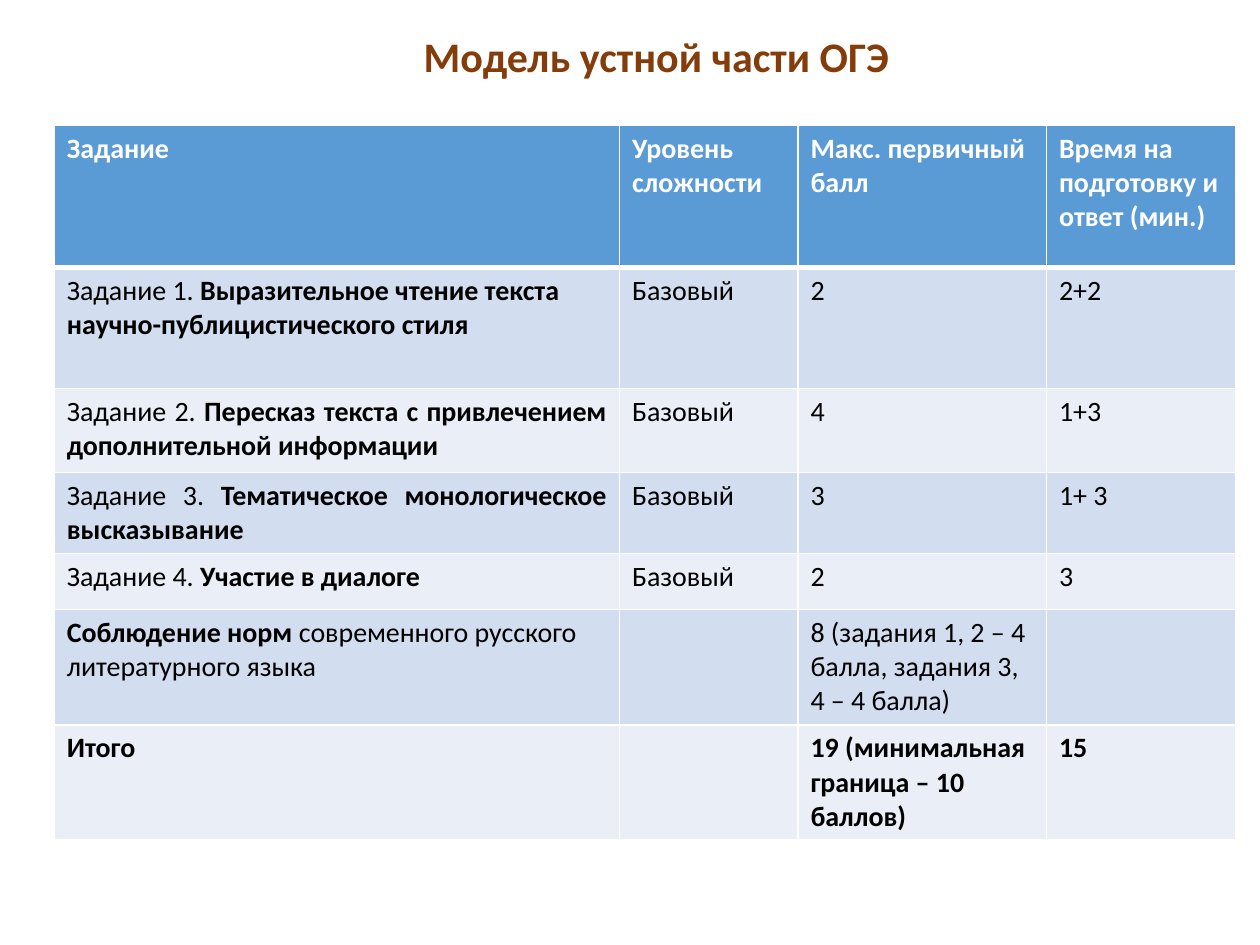
from dataclasses import dataclass

from lxml.etree import SubElement
from pptx import Presentation
from pptx.dml.color import RGBColor
from pptx.enum.text import MSO_ANCHOR, PP_ALIGN
from pptx.oxml.ns import qn
from pptx.util import Pt

# Content: asterisks enclose bold words
TITLE = "Модель устной части ОГЭ"
ROWS = [
    ("*Задание*", "*Уровень сложности*", "*Макс. первичный балл*",
     "*Время на подготовку и ответ (мин.)*"),
    ("Задание 1. *Выразительное чтение текста научно-публицистического стиля*",
     "Базовый", "2", "2+2"),
    ("Задание 2. *Пересказ текста с привлечением дополнительной информации*",
     "Базовый", "4", "1+3"),
    ("Задание 3. *Тематическое монологическое высказывание*",
     "Базовый", "3", "1+ 3"),
    ("Задание 4. *Участие в диалоге*", "Базовый", "2", "3"),
    ("*Соблюдение норм *современного русского литературного языка",
     "", "8 (задания 1, 2 – 4 балла, задания 3, 4 – 4 балла)", ""),
    ("*Итого*", "", "*19 (минимальная граница – 10 баллов)*", "*15*"),
]
JUSTIFIED_ROWS = (2, 3)

# Geometry in points
TITLE_BOX = (60, 0, 630, 67)
TABLE_LEFT, TABLE_TOP = 31, 71.5
COLUMN_WIDTHS = (323, 102, 142, 108)
ROW_HEIGHTS = (81.5, 69, 48, 44.5, 32, 62.5, 62.5)


@dataclass(frozen=True)
class Theme:
    font: str = "Calibri"
    title_size: int = 24
    cell_size: int = 16
    title: str = "843C0B"
    header: str = "5B9BD5"
    bands: tuple = ("EAEFF7", "D2DEEF")
    white: str = "FFFFFF"
    black: str = "000000"


THEME = Theme()


def set_font(font, size):
    font.name = THEME.font
    font.size = Pt(size)


def add_borders(cell, row_index):
    """Draw white cell edges, with a thick rule below the header."""
    properties = cell._tc.get_or_add_tcPr()
    thick_edge = {0: "lnB", 1: "lnT"}.get(row_index)
    for position, edge in enumerate(("lnL", "lnR", "lnT", "lnB")):
        line = SubElement(properties, qn(f"a:{edge}"))
        line.set("w", str(Pt(3 if edge == thick_edge else 1)))
        fill = SubElement(line, qn("a:solidFill"))
        SubElement(fill, qn("a:srgbClr")).set("val", THEME.white)
        properties.insert(position, line)


def fill_cell(cell, text, row_index, column_index):
    is_header = row_index == 0
    cell.fill.solid()
    cell.fill.fore_color.rgb = RGBColor.from_string(
        THEME.header if is_header else THEME.bands[row_index % 2])
    add_borders(cell, row_index)
    para = cell.text_frame.paragraphs[0]
    set_font(para.font, THEME.cell_size)
    if column_index == 0 and row_index in JUSTIFIED_ROWS:
        para.alignment = PP_ALIGN.JUSTIFY
    for part_index, part in enumerate(text.split("*")):
        if part:
            span = para.add_run()
            span.text = part
            span.font.bold = part_index % 2 == 1
            span.font.color.rgb = RGBColor.from_string(
                THEME.white if is_header else THEME.black)


def add_title(page):
    title = page.shapes.title
    title.left, title.top, title.width, title.height = map(Pt, TITLE_BOX)
    title.text_frame.text = TITLE
    title.text_frame.vertical_anchor = MSO_ANCHOR.MIDDLE
    para = title.text_frame.paragraphs[0]
    para.alignment = PP_ALIGN.CENTER
    para.line_spacing = 0.9
    set_font(para.font, THEME.title_size)
    para.font.bold = True
    para.font.color.rgb = RGBColor.from_string(THEME.title)


def add_task_table(page):
    table = page.shapes.add_table(
        len(ROWS), len(COLUMN_WIDTHS), Pt(TABLE_LEFT), Pt(TABLE_TOP),
        Pt(sum(COLUMN_WIDTHS)), Pt(sum(ROW_HEIGHTS))).table
    for column, width in zip(table.columns, COLUMN_WIDTHS):
        column.width = Pt(width)
    for row_index, (row, height, texts) in enumerate(
            zip(table.rows, ROW_HEIGHTS, ROWS)):
        row.height = Pt(height)
        for column_index, (cell, text) in enumerate(zip(row.cells, texts)):
            fill_cell(cell, text, row_index, column_index)


def main():
    deck = Presentation()
    deck.slide_width, deck.slide_height = Pt(720), Pt(540)
    page = deck.slides.add_slide(deck.slide_layouts[5])  # title only
    add_title(page)
    add_task_table(page)
    deck.save("out.pptx")


if __name__ == "__main__":
    main()
